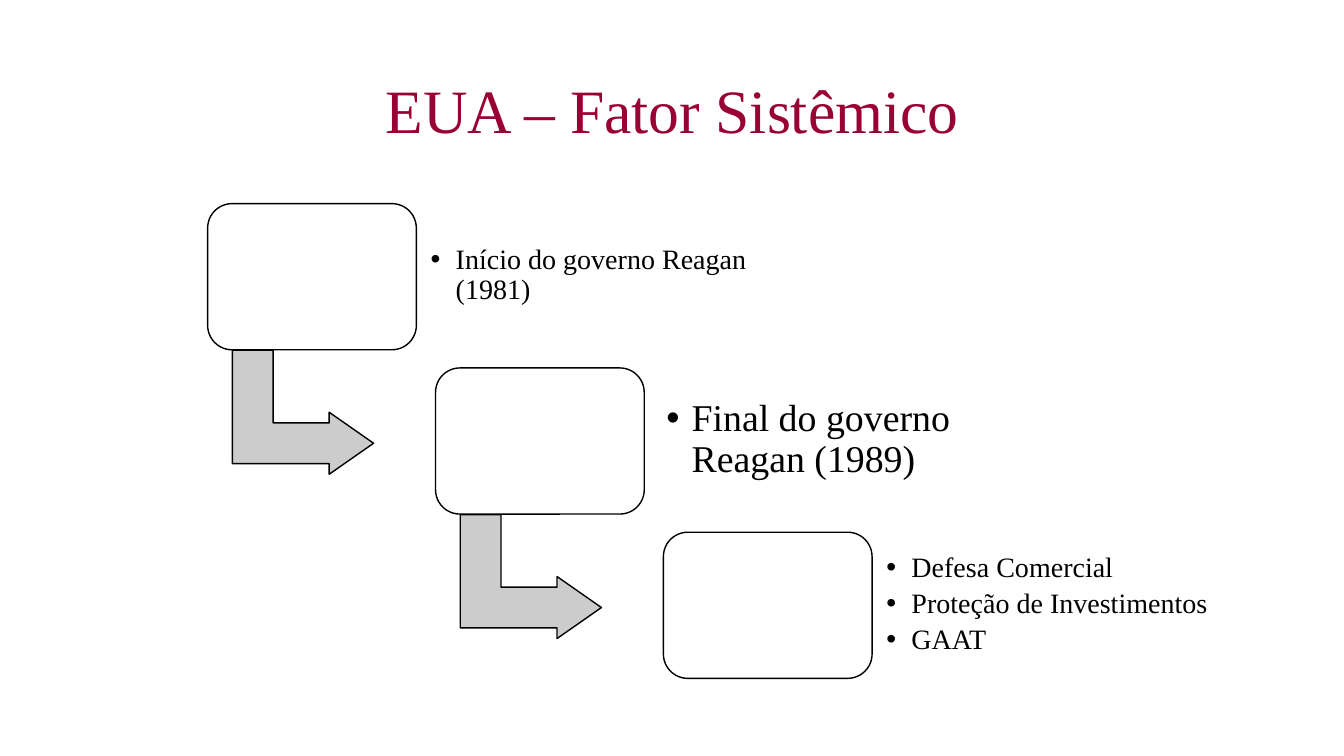
"""Build the staircase slide on the systemic factor in the United States."""
from dataclasses import dataclass

from lxml.etree import SubElement
from pptx import Presentation
from pptx.dml.color import RGBColor
from pptx.enum.shapes import MSO_SHAPE
from pptx.enum.text import MSO_ANCHOR, MSO_AUTO_SIZE, PP_ALIGN
from pptx.oxml.ns import qn
from pptx.shapes.autoshape import Shape
from pptx.slide import Slide
from pptx.text.text import _Paragraph as Paragraph
from pptx.util import Inches, Pt


@dataclass(frozen=True)
class Theme:
    font: str = "Times New Roman"
    title_color: RGBColor = RGBColor(0x99, 0x00, 0x33)
    ink: RGBColor = RGBColor(0x00, 0x00, 0x00)
    box_fill: RGBColor = RGBColor(0xFF, 0xFF, 0xFF)
    arrow_fill: RGBColor = RGBColor(0xCC, 0xCC, 0xCC)
    title_size: int = 44
    item_size: int = 20
    large_item_size: int = 27


@dataclass(frozen=True)
class Step:
    items: tuple[str, ...]
    text_left: float
    text_width: float
    inset: float
    size: int


THEME = Theme()
STEPS = (
    Step(("Início do governo Reagan (1981)",), 4.19, 3.77, 0.08, THEME.item_size),
    Step(("Final do governo Reagan (1989)",), 6.46, 3.34, 0.15, THEME.large_item_size),
    Step(("Defesa Comercial", "Proteção de Investimentos", "GAAT"),
         8.69, 3.73, 0.1, THEME.item_size),
)
FIRST_LEFT, FIRST_TOP = 2.06, 2.02
STEP_RIGHT, STEP_DOWN = 2.26, 1.63
COMPARISON_LAYOUT = 4


def place(shape: Shape, left: float, top: float, width: float, height: float) -> None:
    shape.left, shape.top = Inches(left), Inches(top)
    shape.width, shape.height = Inches(width), Inches(height)


def format_paragraph(paragraph: Paragraph, size: int, color: RGBColor) -> None:
    paragraph.line_spacing = 0.9
    paragraph.space_before = Pt(0)
    paragraph.font.name = THEME.font
    paragraph.font.size = Pt(size)
    paragraph.font.bold = False
    paragraph.font.color.rgb = color


def add_bullet(paragraph: Paragraph) -> None:
    properties = paragraph._p.get_or_add_pPr()
    properties.set("marL", str(Inches(0.25)))
    properties.set("indent", str(Inches(-0.25)))
    bullet = SubElement(properties, qn("a:buChar"))
    bullet.set("char", "•")
    properties.insert_element_before(bullet, "a:tabLst", "a:defRPr", "a:extLst")


def fill_title(title: Shape) -> None:
    place(title, 0.92, 0.4, 11.5, 1.45)
    frame = title.text_frame
    frame.text = "EUA – Fator Sistêmico"
    frame.vertical_anchor = MSO_ANCHOR.MIDDLE
    frame.auto_size = MSO_AUTO_SIZE.NONE
    paragraph = frame.paragraphs[0]
    paragraph.alignment = PP_ALIGN.CENTER
    format_paragraph(paragraph, THEME.title_size, THEME.title_color)


def fill_list(body: Shape, step: Step, top: float) -> None:
    place(body, step.text_left, top, step.text_width, 1.17)
    frame = body.text_frame
    frame.text = "\n".join(step.items)
    frame.word_wrap = True
    frame.vertical_anchor = MSO_ANCHOR.MIDDLE
    frame.auto_size = MSO_AUTO_SIZE.NONE
    frame.margin_left = frame.margin_right = Inches(step.inset)
    frame.margin_top = frame.margin_bottom = Inches(step.inset)
    for paragraph in frame.paragraphs:
        paragraph.alignment = PP_ALIGN.LEFT
        format_paragraph(paragraph, step.size, THEME.ink)
        paragraph.space_after = Pt(step.size * 0.2)
        add_bullet(paragraph)


def add_outlined(slide: Slide, kind: MSO_SHAPE, bounds: tuple[float, ...],
                 fill: RGBColor, adjustments: tuple[float, ...]) -> Shape:
    shape = slide.shapes.add_shape(kind, *map(Inches, bounds))
    shape.shadow.inherit = False
    shape.fill.solid()
    shape.fill.fore_color.rgb = fill
    shape.line.color.rgb = THEME.ink
    shape.line.width = Pt(1)
    for index, value in enumerate(adjustments):
        shape.adjustments[index] = value
    return shape


def main() -> None:
    presentation = Presentation()
    presentation.slide_width, presentation.slide_height = Inches(13.33), Inches(7.5)
    slide = presentation.slides.add_slide(presentation.slide_layouts[COMPARISON_LAYOUT])
    title, *bodies = slide.placeholders
    fill_title(title)
    for index, (step, body) in enumerate(zip(STEPS, bodies)):
        left = FIRST_LEFT + index * STEP_RIGHT
        top = FIRST_TOP + index * STEP_DOWN
        if index < len(STEPS) - 1:
            arrow = add_outlined(slide, MSO_SHAPE.BENT_UP_ARROW,
                                 (left + 0.33, top + 1.37, 1.23, 1.4),
                                 THEME.arrow_fill, (0.328, 0.25, 0.358))
            arrow.rotation = 90
        add_outlined(slide, MSO_SHAPE.ROUNDED_RECTANGLE, (left, top, 2.07, 1.45),
                     THEME.box_fill, (0.167,))
        fill_list(body, step, top + 0.13)
    for unused in bodies[len(STEPS):]:
        unused.element.getparent().remove(unused.element)
    presentation.save("out.pptx")


if __name__ == "__main__":
    main()
